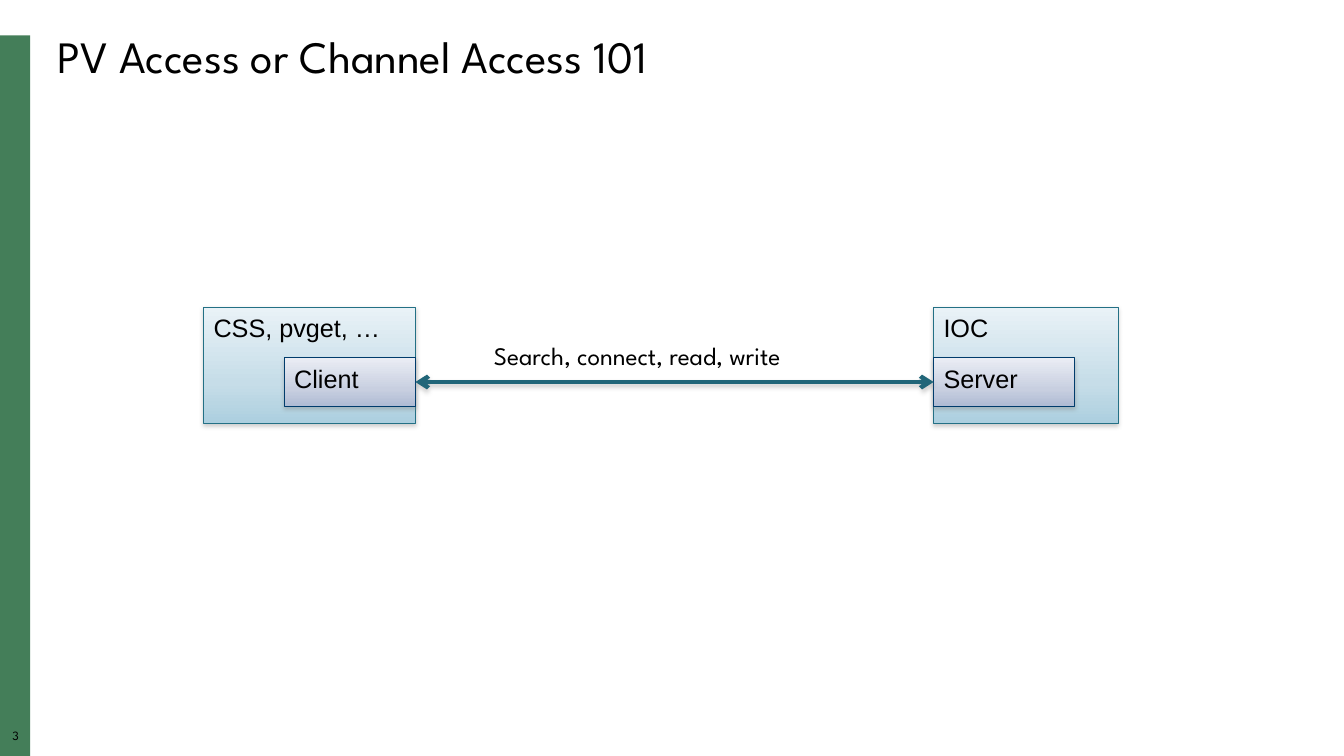
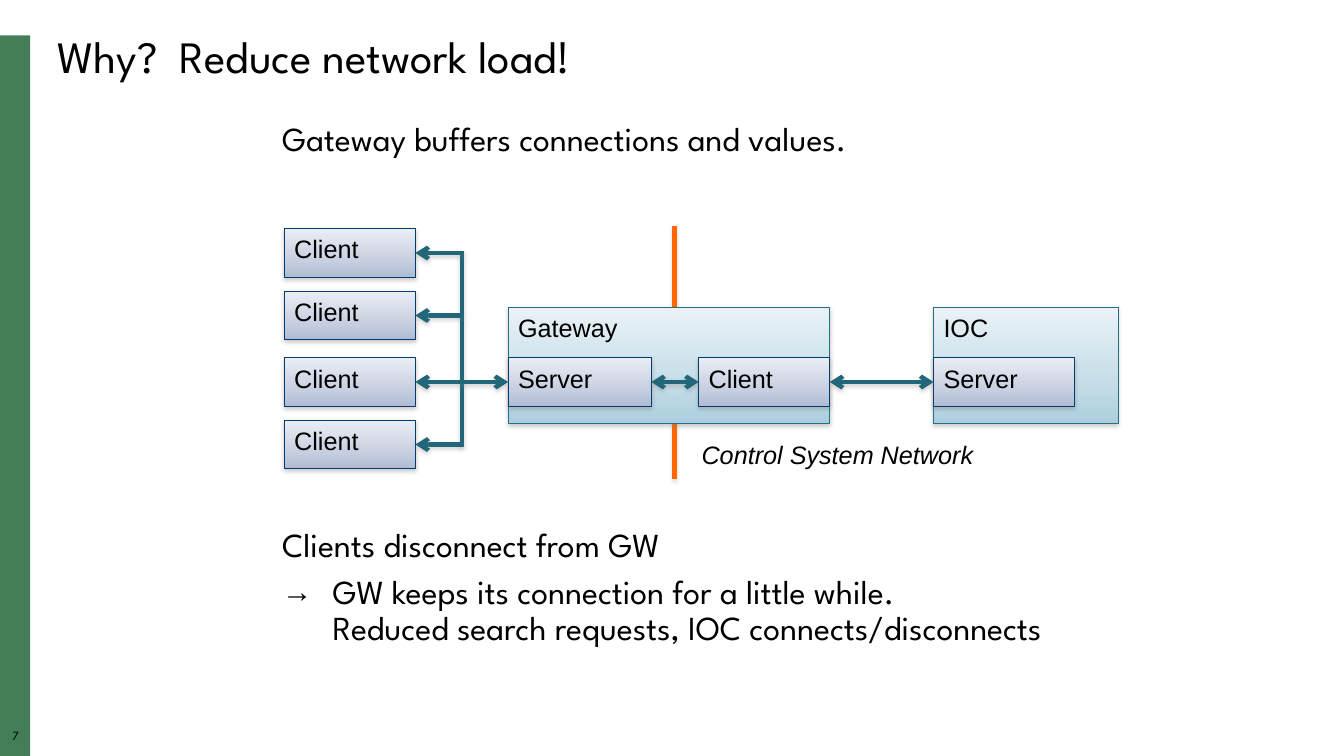
from lxml.etree import SubElement
from pptx import Presentation
from pptx.dml.color import RGBColor
from pptx.enum.shapes import MSO_CONNECTOR, MSO_SHAPE
from pptx.enum.text import MSO_ANCHOR, PP_ALIGN
from pptx.oxml.ns import qn
from pptx.util import Inches, Pt

COLORS = {
    "band": "447E59", "text": "000000", "shadow": "808080",
    "arrow": "216679", "divider": "FF6600",
}
# Outline, then gradient stops from top (0 %) to bottom (100 %).
BOX_STYLES = {
    "host": ("237085", ((0, "E9F2F7"), (65, "C6DDE8"), (100, "ACCFDF"))),
    "role": ("003C6C", ((0, "EAEDF4"), (65, "C8CFE0"), (100, "AFBBD4"))),
}
HEADING_FONT, LABEL_FONT = "League Spartan", "Arial"

# Diagram grid in inches
HOST_TOP, HOST_HEIGHT = 3.05, 1.15
ROLE_TOP, ROLE_HEIGHT = 3.55, 0.48
AXIS = ROLE_TOP + ROLE_HEIGHT / 2
CLIENT_LEFT, CLIENT_WIDTH = 2.82, 1.3
CLIENT_RIGHT = CLIENT_LEFT + CLIENT_WIDTH
GATEWAY_LEFT, GATEWAY_WIDTH, GATEWAY_SERVER_WIDTH = 5.04, 3.19, 1.42
GATEWAY_RIGHT = GATEWAY_LEFT + GATEWAY_WIDTH
GATEWAY_CLIENT_LEFT = GATEWAY_RIGHT - CLIENT_WIDTH
IOC_LEFT = 9.26
BUS_X = (CLIENT_RIGHT + GATEWAY_LEFT) / 2
LINE_WIDTH = 3

CLIENT_TOPS = [pair_top + step for pair_top in (2.27, ROLE_TOP) for step in (0, 0.62)]
IOC_HOST = ("IOC", IOC_LEFT, 1.83)
IOC_SERVER = ("Server", IOC_LEFT, ROLE_TOP, 1.4)

# Hosts: label, left, width. Roles: label, left, top, width.
# Arrows: left, right, y, whether the right end has a head too.
SLIDES = [
    {
        "number": "3",
        "title": "PV Access or Channel Access 101",
        "hosts": [("CSS, pvget, …", 2.02, 2.1), IOC_HOST],
        "roles": [("Client", CLIENT_LEFT, ROLE_TOP, CLIENT_WIDTH), IOC_SERVER],
        "arrows": [(CLIENT_RIGHT, IOC_LEFT, AXIS, True)],
        "texts": [
            {"at": (4.8, 3.36, 4.04, 0.37), "size": 18, "font": HEADING_FONT,
             "paragraphs": [["Search, connect, read, write"]]},
        ],
    },
    {
        "number": "7",
        "title": "Why?  Reduce network load!",
        "divider": (6.69, 2.24, 4.75),
        "hosts": [("Gateway", GATEWAY_LEFT, GATEWAY_WIDTH), IOC_HOST],
        "roles": [("Client", CLIENT_LEFT, top, CLIENT_WIDTH) for top in CLIENT_TOPS] + [
            ("Server", GATEWAY_LEFT, ROLE_TOP, GATEWAY_SERVER_WIDTH),
            ("Client", GATEWAY_CLIENT_LEFT, ROLE_TOP, CLIENT_WIDTH),
            IOC_SERVER,
        ],
        "bus": (BUS_X, CLIENT_TOPS[0] + ROLE_HEIGHT / 2, CLIENT_TOPS[-1] + ROLE_HEIGHT / 2),
        "arrows": [
            (CLIENT_RIGHT, BUS_X, top + ROLE_HEIGHT / 2, False)
            for top in CLIENT_TOPS if top != ROLE_TOP
        ] + [
            (CLIENT_RIGHT, GATEWAY_LEFT, AXIS, True),
            (GATEWAY_LEFT + GATEWAY_SERVER_WIDTH, GATEWAY_CLIENT_LEFT, AXIS, True),
            (GATEWAY_RIGHT, IOC_LEFT, AXIS, True),
        ],
        "texts": [
            {"at": (2.7, 1.17, 10.49, 0.5), "size": 24, "font": HEADING_FONT,
             "paragraphs": [["Gateway buffers connections and values."]]},
            {"at": (2.7, 5.19, 10.49, 1.4), "size": 24, "font": HEADING_FONT,
             "paragraphs": [
                 ["Clients disconnect from GW"],
                 ["GW keeps its connection for a little while.",
                  "Reduced search requests, IOC connects/disconnects"],
             ], "bulleted": 1},
            {"at": (6.86, 4.31, 2.98, 0.4), "size": 18, "font": LABEL_FONT,
             "paragraphs": [["Control System Network"]], "italic": True},
        ],
    },
]


def rgb(name):
    return RGBColor.from_string(COLORS.get(name, name))


def inches(values):
    return [Inches(value) for value in values]


def add_shadow(properties, opacity, distance):
    """Put a soft downward shadow on a shape or connector."""
    effects = properties.find(qn("a:effectLst"))
    if effects is None:
        effects = SubElement(properties, qn("a:effectLst"))
    shadow = SubElement(effects, qn("a:outerShdw"), blurRad=str(Pt(3.1)),
                        dist=str(Pt(distance)), dir="5400000", rotWithShape="0")
    color = SubElement(shadow, qn("a:srgbClr"), val=COLORS["shadow"])
    SubElement(color, qn("a:alpha"), val=str(opacity * 1000))


def add_bullet(paragraph):
    properties = paragraph._p.get_or_add_pPr()
    properties.set("marL", str(Inches(0.5)))
    properties.set("indent", str(-Inches(0.5)))
    color = SubElement(properties, qn("a:buClr"))
    SubElement(color, qn("a:srgbClr"), val=COLORS["text"])
    SubElement(properties, qn("a:buSzPct"), val="90000")
    SubElement(properties, qn("a:buFont"), typeface=LABEL_FONT)
    SubElement(properties, qn("a:buChar"), char="→")


def add_run(paragraph, text, size, font, italic=False):
    run = paragraph.add_run()
    run.text = text
    run.font.size = Pt(size)
    run.font.name = font
    run.font.italic = italic
    run.font.color.rgb = rgb("text")


def add_text(slide, at, paragraphs, size, font, italic=False, bulleted=None,
             align=PP_ALIGN.LEFT, margins=True):
    """Add a text box; each paragraph is a list of lines."""
    frame = slide.shapes.add_textbox(*inches(at)).text_frame
    frame.word_wrap = True
    if not margins:
        frame.margin_left = frame.margin_right = frame.margin_top = frame.margin_bottom = 0
    for index, lines in enumerate(paragraphs):
        paragraph = frame.add_paragraph() if index else frame.paragraphs[0]
        paragraph.alignment = align
        if font == HEADING_FONT:
            paragraph.line_spacing = 0.9
        if index:
            paragraph.space_before = Pt(8)
        if index == bulleted:
            add_bullet(paragraph)
        for line_index, line in enumerate(lines):
            if line_index:
                paragraph.add_line_break()
            add_run(paragraph, line, size, font, italic)


def add_box(slide, style, label, left, top, width, height):
    outline, stops = BOX_STYLES[style]
    shape = slide.shapes.add_shape(MSO_SHAPE.RECTANGLE, *inches((left, top, width, height)))
    shape.fill.gradient()
    shape.fill.gradient_angle = 270
    properties = shape._element.spPr
    stop_list = properties.find(qn("a:gradFill")).find(qn("a:gsLst"))
    for stop in list(stop_list):
        stop_list.remove(stop)
    for position, color in stops:
        stop = SubElement(stop_list, qn("a:gs"), pos=str(position * 1000))
        SubElement(stop, qn("a:srgbClr"), val=color)
    shape.line.color.rgb = rgb(outline)
    shape.line.width = Pt(0.75)
    shape.shadow.inherit = False
    add_shadow(properties, 38, 1.6)
    frame = shape.text_frame
    frame.vertical_anchor = MSO_ANCHOR.TOP
    frame.paragraphs[0].alignment = PP_ALIGN.LEFT
    add_run(frame.paragraphs[0], label, 18, LABEL_FONT)


def add_line(slide, start, end, color, heads=()):
    """Draw a straight line; heads names the ends with an arrowhead."""
    connector = slide.shapes.add_connector(MSO_CONNECTOR.STRAIGHT, *inches(start + end))
    connector.line.color.rgb = rgb(color)
    connector.line.width = Pt(LINE_WIDTH)
    properties = connector._element.spPr
    for head in heads:
        SubElement(properties.find(qn("a:ln")), qn(f"a:{head}"), type="arrow")
    add_shadow(properties, 35, 1.8)


def add_frame(slide, title, number):
    """Add the side band, slide number and title that all slides share."""
    band = slide.shapes.add_shape(MSO_SHAPE.RECTANGLE, *inches((0, 0.35, 0.3, 7.15)))
    band.fill.solid()
    band.fill.fore_color.rgb = rgb("band")
    band.line.fill.background()
    band.shadow.inherit = False
    add_text(slide, (0, 7.24, 0.31, 0.17), [[number]], 9, HEADING_FONT,
             align=PP_ALIGN.CENTER, margins=False)
    add_text(slide, (0.47, 0.3, 12.5, 0.59), [[title]], 32, HEADING_FONT)


def build_slide(presentation, content):
    slide = presentation.slides.add_slide(presentation.slide_layouts[6])
    add_frame(slide, content["title"], content["number"])
    if "divider" in content:
        x, top, bottom = content["divider"]
        add_line(slide, (x, top), (x, bottom), "divider")
    for label, left, width in content["hosts"]:
        add_box(slide, "host", label, left, HOST_TOP, width, HOST_HEIGHT)
    for label, left, top, width in content["roles"]:
        add_box(slide, "role", label, left, top, width, ROLE_HEIGHT)
    if "bus" in content:
        x, top, bottom = content["bus"]
        overlap = LINE_WIDTH / 72 / 2
        add_line(slide, (x, top - overlap), (x, bottom + overlap), "arrow")
    for left, right, y, both_ends in content["arrows"]:
        heads = ("headEnd", "tailEnd") if both_ends else ("headEnd",)
        add_line(slide, (left, y), (right, y), "arrow", heads)
    for text in content["texts"]:
        add_text(slide, **text)


def main():
    presentation = Presentation()
    presentation.slide_width, presentation.slide_height = inches((13.33, 7.5))
    for content in SLIDES:
        build_slide(presentation, content)
    presentation.save("out.pptx")


if __name__ == "__main__":
    main()
